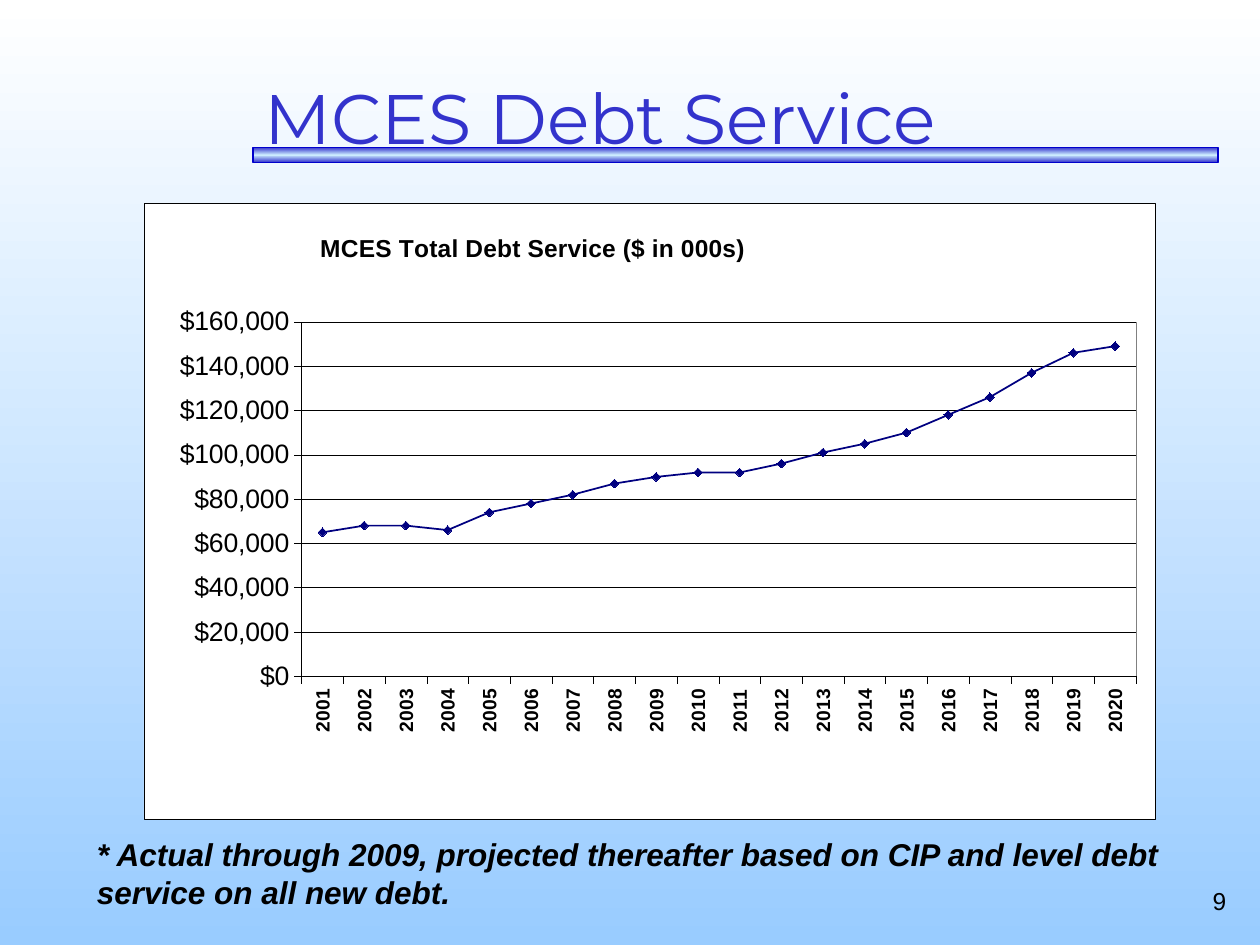
import copy
import pptx
import pptx.chart.data
import pptx.dml.color
import pptx.enum.chart
import pptx.enum.shapes
import pptx.enum.text
import pptx.oxml
import pptx.oxml.ns
import pptx.util
from lxml import etree

Inches, Pt = pptx.util.Inches, pptx.util.Pt
RGB = pptx.dml.color.RGBColor
qn = pptx.oxml.ns.qn
Tick = pptx.enum.chart.XL_TICK_MARK
Align = pptx.enum.text.PP_ALIGN
Anchor = pptx.enum.text.MSO_ANCHOR

BLACK, WHITE = RGB(0, 0, 0), RGB(255, 255, 255)
SKY, ICE = RGB(0x99, 0xCC, 0xFF), RGB(0xCC, 0xEC, 0xFF)
BLUE, EDGE = RGB(0x33, 0x33, 0xCC), RGB(0, 0, 0xCC)
NAVY, GRAY = RGB(0, 0, 0x80), RGB(0x80, 0x80, 0x80)

TITLE = "MCES Debt Service"
NOTE = ("* Actual through 2009, projected thereafter based on CIP "
        "and level debt service on all new debt.")
HEAD = "MCES Total Debt Service ($ in 000s)"
START = 2001
DEBT = [65000, 68000, 68000, 66000, 74000, 78000, 82000, 87000, 90000, 92000,
        92000, 96000, 101000, 105000, 110000, 118000, 126000, 137000, 146000,
        149000]
PLOT = {"x": 0.156, "y": 0.193, "w": 0.825, "h": 0.576}
HEAD_AT = {"x": 0.17, "y": 0.04}


def grade(fill, root, tones):
    """Give a fill evenly spaced tones from top to bottom."""
    fill.gradient()
    fill.gradient_angle = 270
    stops = root.find(".//" + qn("a:gsLst"))
    for _ in tones[2:]:
        stops.append(copy.deepcopy(stops[0]))
    for i, (stop, tone) in enumerate(zip(fill.gradient_stops, tones)):
        stop.color.rgb = tone
        stop.position = i / (len(tones) - 1)


def style(font, size, color=BLACK, name="Arial", bold=False, italic=False):
    font.size, font.name = Pt(size), name
    font.bold, font.italic = bold, italic
    font.color.rgb = color


def write(slide, text, box, size, align=Align.LEFT, anchor=Anchor.TOP, **look):
    frame = slide.shapes.add_textbox(*map(Inches, box)).text_frame
    frame.word_wrap = True
    frame.vertical_anchor = anchor
    para = frame.paragraphs[0]
    para.text, para.alignment = text, align
    style(para.font, size, **look)


def rule(line, color=BLACK, width=0.25):
    line.color.rgb = color
    line.width = Pt(width)


def place(owner, spot, inner=False):
    """Set a manual layout, as fractions of the chart, on a title or plot."""
    for old in owner.findall(qn("c:layout")):
        owner.remove(old)
    layout = etree.Element(qn("c:layout"))
    manual = etree.SubElement(layout, qn("c:manualLayout"))
    parts = [("layoutTarget", "inner")] if inner else []
    parts += [("xMode", "edge"), ("yMode", "edge"), *spot.items()]
    for tag, val in parts:
        etree.SubElement(manual, qn("c:" + tag)).set("val", str(val))
    text = owner.find(qn("c:tx"))
    owner.insert(0 if text is None else 1, layout)


def paint(owner, fill, line, before):
    """Add a plain fill and border ahead of the first listed sibling."""
    ns = pptx.oxml.ns.nsdecls("c", "a")
    props = pptx.oxml.parse_xml(
        f'<c:spPr {ns}><a:solidFill><a:srgbClr val="{fill}"/></a:solidFill>'
        f'<a:ln w="{Pt(0.25)}"><a:solidFill><a:srgbClr val="{line}"/>'
        '</a:solidFill></a:ln></c:spPr>')
    for tag in before:
        mark = owner.find(qn(tag))
        if mark is not None:
            mark.addprevious(props)
            return
    owner.append(props)


def draw(slide):
    data = pptx.chart.data.CategoryChartData()
    data.categories = [str(START + i) for i in range(len(DEBT))]
    data.add_series("Series 1", DEBT)
    kind = pptx.enum.chart.XL_CHART_TYPE.LINE_MARKERS
    box = map(Inches, (1.14, 1.61, 8.03, 4.89))
    chart = slide.shapes.add_chart(kind, *box, data).chart
    style(chart.font, 15.2)
    chart.has_legend = False
    chart.has_title = True
    para = chart.chart_title.text_frame.paragraphs[0]
    para.text = HEAD
    style(para.font, 14, bold=True)

    years, costs = chart.category_axis, chart.value_axis
    for axis, size, bold in ((years, 11, True), (costs, 15.2, False)):
        axis.major_tick_mark, axis.minor_tick_mark = Tick.OUTSIDE, Tick.NONE
        style(axis.tick_labels.font, size, bold=bold)
        rule(axis.format.line)
    turn = years.tick_labels.font  # ensures the label properties exist
    turn.bold = True
    years._element.find(".//" + qn("a:bodyPr")).set("rot", "-5400000")
    costs.minimum_scale, costs.maximum_scale = 0, 160000
    costs.major_unit = 20000
    costs.tick_labels.number_format = "\\$#,##0"
    costs.tick_labels.number_format_is_linked = False
    rule(costs.major_gridlines.format.line)

    plot = chart.plots[0]
    plot.vary_by_categories = False
    debt = plot.series[0]
    debt.smooth = False
    rule(debt.format.line, NAVY, 1)
    dot = debt.marker
    dot.style, dot.size = pptx.enum.chart.XL_MARKER_STYLE.DIAMOND, 5
    dot.format.fill.solid()
    dot.format.fill.fore_color.rgb = NAVY
    rule(dot.format.line, NAVY)

    root = chart.element
    area = root.find(".//" + qn("c:plotArea"))
    place(area, PLOT, inner=True)
    place(chart.chart_title._element, HEAD_AT)
    paint(area, WHITE, GRAY, ["c:extLst"])
    paint(root, WHITE, BLACK, ["c:txPr", "c:externalData"])


def main():
    deck = pptx.Presentation()
    deck.slide_width, deck.slide_height = Inches(10), Inches(7.5)
    slide = deck.slides.add_slide(deck.slide_layouts[6])
    back = slide.background.fill
    grade(back, slide.element, [WHITE, SKY])

    rect = pptx.enum.shapes.MSO_SHAPE.RECTANGLE
    bar = slide.shapes.add_shape(rect, *map(Inches, (2.01, 1.17, 7.66, 0.12)))
    bar.shadow.inherit = False
    grade(bar.fill, bar.element, [BLUE, ICE, BLUE])
    rule(bar.line, EDGE, 1)

    write(slide, "9", (7.5, 6.98, 2.33, 0.52), 14, align=Align.RIGHT)
    write(slide, TITLE, (2, 0.42, 8, 0.89), 40, anchor=Anchor.BOTTOM,
          color=BLUE, name="Montserrat")
    write(slide, NOTE, (0.67, 6.58, 8.75, 0.71), 18, bold=True, italic=True)
    draw(slide)
    deck.save("out.pptx")


if __name__ == "__main__":
    main()
